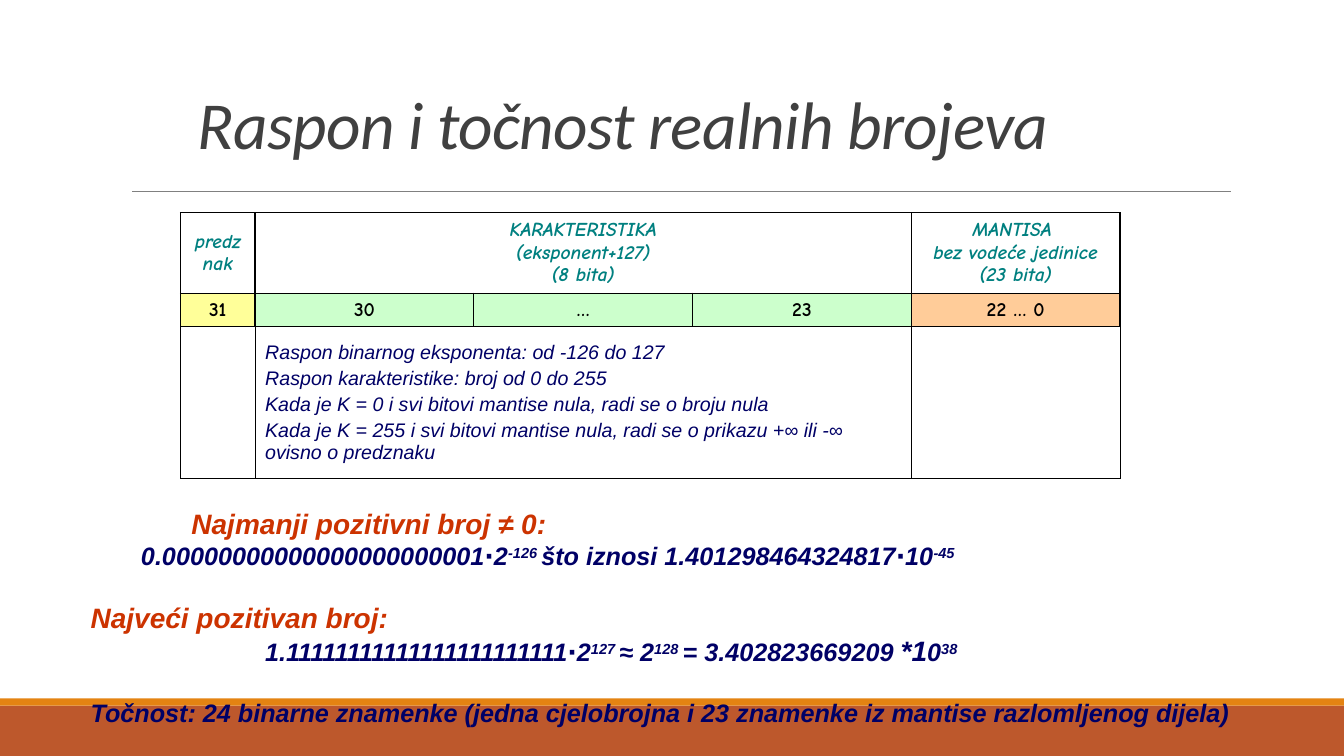
from lxml import etree
from pptx import Presentation
from pptx import util as u
from pptx.dml.color import RGBColor
from pptx.enum import shapes, text
from pptx.oxml.ns import qn

WHITE = RGBColor(0xFF, 0xFF, 0xFF)
BLACK = RGBColor(0, 0, 0)
GRAY = RGBColor(0x80, 0x80, 0x80)
DARK = RGBColor(0x40, 0x40, 0x40)
RUST = RGBColor(0xBD, 0x58, 0x2C)
ORANGE = RGBColor(0xE4, 0x83, 0x12)
TEAL = RGBColor(0, 0x80, 0x80)
NAVY = RGBColor(0, 0, 0x66)
RED = RGBColor(0xCC, 0x33, 0)
YELLOW = RGBColor(0xFF, 0xFF, 0x99)
GREEN = RGBColor(0xCC, 0xFF, 0xCC)
PEACH = RGBColor(0xFF, 0xCC, 0x99)

TITLE = "Raspon i točnost realnih brojeva"
BARS = [(7, 0.5, RUST), (6.93, 0.07, ORANGE)]  # top, height, colour
COLS = [0.74, 2.17, 2.17, 2.17, 2.07]
ROWS = [0.8, 0.33, 1.51]
HEADS = {0: "predznak",
         1: "KARAKTERISTIKA\n(eksponent+127)\n(8 bita)",
         4: "MANTISA \nbez vodeće jedinice\n(23 bita)"}
BITS = [("31", YELLOW), ("30", GREEN), ("…", GREEN), ("23", GREEN),
        ("22 … 0", PEACH)]
RANGES = """Raspon binarnog eksponenta: od -126 do 127
Raspon karakteristike: broj od 0 do 255
Kada je K = 0 i svi bitovi mantise nula, radi se o broju nula
Kada je K = 255 i svi bitovi mantise nula, radi se o prikazu +∞ ili -∞ ovisno o predznaku"""
# indent, space before, runs of (text, size, colour, superscript)
LIMITS = [
    (1, 0, [("Najmanji pozitivni broj ≠ 0:", 20, RED, False)]),
    (0.5, 0, [("0.00000000000000000000001⋅2", 18, NAVY, False),
              ("-126 ", 18, NAVY, True),
              ("što iznosi 1.401298464324817⋅10", 18, NAVY, False),
              ("-45", 18, NAVY, True)]),
    (0, 21, [("Najveći pozitivan broj:", 20, RED, False)]),
    (1.73, 0, [("1.11111111111111111111111⋅2", 18, NAVY, False),
               ("127 ", 18, NAVY, True),
               ("≈ 2", 18, NAVY, False),
               ("128 ", 18, NAVY, True),
               ("= 3.402823669209 ", 18, NAVY, False),
               ("*1", 20, NAVY, False),
               ("0", 18, NAVY, False),
               ("38", 18, NAVY, True)]),
    (0, 21, [("Točnost: 24 binarne znamenke (jedna cjelobrojna i 23 znamenke "
              "iz mantise razlomljenog dijela)", 18, NAVY, False)]),
]


def style(r, name, size, color, bold=False, italic=True):
    f = r.font
    f.name, f.size, f.bold, f.italic = name, u.Pt(size), bold, italic
    f.color.rgb = color


def box(cell, widths):
    """Draw the four borders, widths in points for left, right, top, bottom."""
    tcPr = cell._tc.get_or_add_tcPr()
    for side, width in zip("LRTB", widths):
        ln = etree.SubElement(tcPr, qn("a:ln" + side), w=str(u.Pt(width)))
        fill = etree.SubElement(ln, qn("a:solidFill"))
        etree.SubElement(fill, qn("a:srgbClr"), val=str(BLACK))


def fill_cell(cell, words, font, align, gap=0):
    cell.vertical_anchor = text.MSO_ANCHOR.MIDDLE
    cell.text_frame.text = words
    for p in cell.text_frame.paragraphs:
        p.alignment, p.space_before = align, u.Pt(gap)
        for r in p.runs:
            style(r, *font)


def add_backdrop(s):
    for top, height, color in BARS:
        bar = s.shapes.add_shape(shapes.MSO_SHAPE.RECTANGLE, 0, u.Inches(top),
                                 prs.slide_width, u.Inches(height))
        bar.shadow.inherit = False
        bar.fill.solid()
        bar.fill.fore_color.rgb = color
        bar.line.fill.background()
    rule = s.shapes.add_connector(shapes.MSO_CONNECTOR.STRAIGHT, u.Inches(1.31),
                                  u.Inches(1.9), u.Inches(12.21), u.Inches(1.9))
    rule.line.color.rgb = GRAY
    rule.line.width = u.Pt(0.5)
    etree.SubElement(rule._element.spPr, qn("a:effectLst"))


def add_title(s):
    sp = s.shapes.title
    sp.left, sp.top, sp.width, sp.height = map(u.Inches, (1.86, 0.76, 9.25, 0.91))
    tf = sp.text_frame
    tf.text = TITLE
    tf.vertical_anchor = text.MSO_ANCHOR.BOTTOM
    p = tf.paragraphs[0]
    p.alignment, p.line_spacing = text.PP_ALIGN.LEFT, 0.85
    style(p.runs[0], "Calibri", 48, DARK)
    p.runs[0].font._element.set("spc", "-50")


def add_format_table(s):
    table = s.shapes.add_table(len(ROWS), len(COLS), u.Inches(1.79), u.Inches(2.11),
                               u.Inches(sum(COLS)), u.Inches(sum(ROWS))).table
    table.first_row = table.horz_banding = False
    for col, width in zip(table.columns, COLS):
        col.width = u.Inches(width)
    for row, height in zip(table.rows, ROWS):
        row.height = u.Inches(height)
    for i in range(len(ROWS)):
        for j in range(len(COLS)):
            cell = table.cell(i, j)
            box(cell, (0.75, 0.75, 1, 0.75) if i == 2 else (1, 1, 1, 1))
            if i == 1:
                cell.fill.solid()
                cell.fill.fore_color.rgb = BITS[j][1]
            else:
                cell.fill.background()
    for i in (0, 2):
        table.cell(i, 1).merge(table.cell(i, 3))
    center = text.PP_ALIGN.CENTER
    for j, words in HEADS.items():
        fill_cell(table.cell(0, j), words, ("Comic Neue", 14, TEAL, True), center)
    for j, (bit, _) in enumerate(BITS):
        fill_cell(table.cell(1, j), bit, ("Comic Neue", 14, BLACK, True, False), center)
    fill_cell(table.cell(2, 1), RANGES, ("Arial", 14, NAVY), text.PP_ALIGN.LEFT, 2.8)


def add_limits(s):
    tf = s.shapes.add_textbox(*map(u.Inches, (0.8, 4.98, 12.35, 2.32))).text_frame
    tf.word_wrap = True
    for i, (indent, gap, runs) in enumerate(LIMITS):
        p = tf.paragraphs[0] if i == 0 else tf.add_paragraph()
        p.space_before = u.Pt(gap)
        p._p.get_or_add_pPr().set("marL", str(u.Inches(indent)))
        for words, size, color, raised in runs:
            r = p.add_run()
            r.text = words
            style(r, "Arial", size, color, True)
            if raised:
                r.font._element.set("baseline", "30000")


prs = Presentation()
prs.slide_width, prs.slide_height = u.Inches(13.33), u.Inches(7.5)
s = prs.slides.add_slide(prs.slide_layouts[5])
s.background.fill.solid()
s.background.fill.fore_color.rgb = WHITE
add_backdrop(s)
add_title(s)
add_format_table(s)
add_limits(s)
prs.save("out.pptx")
